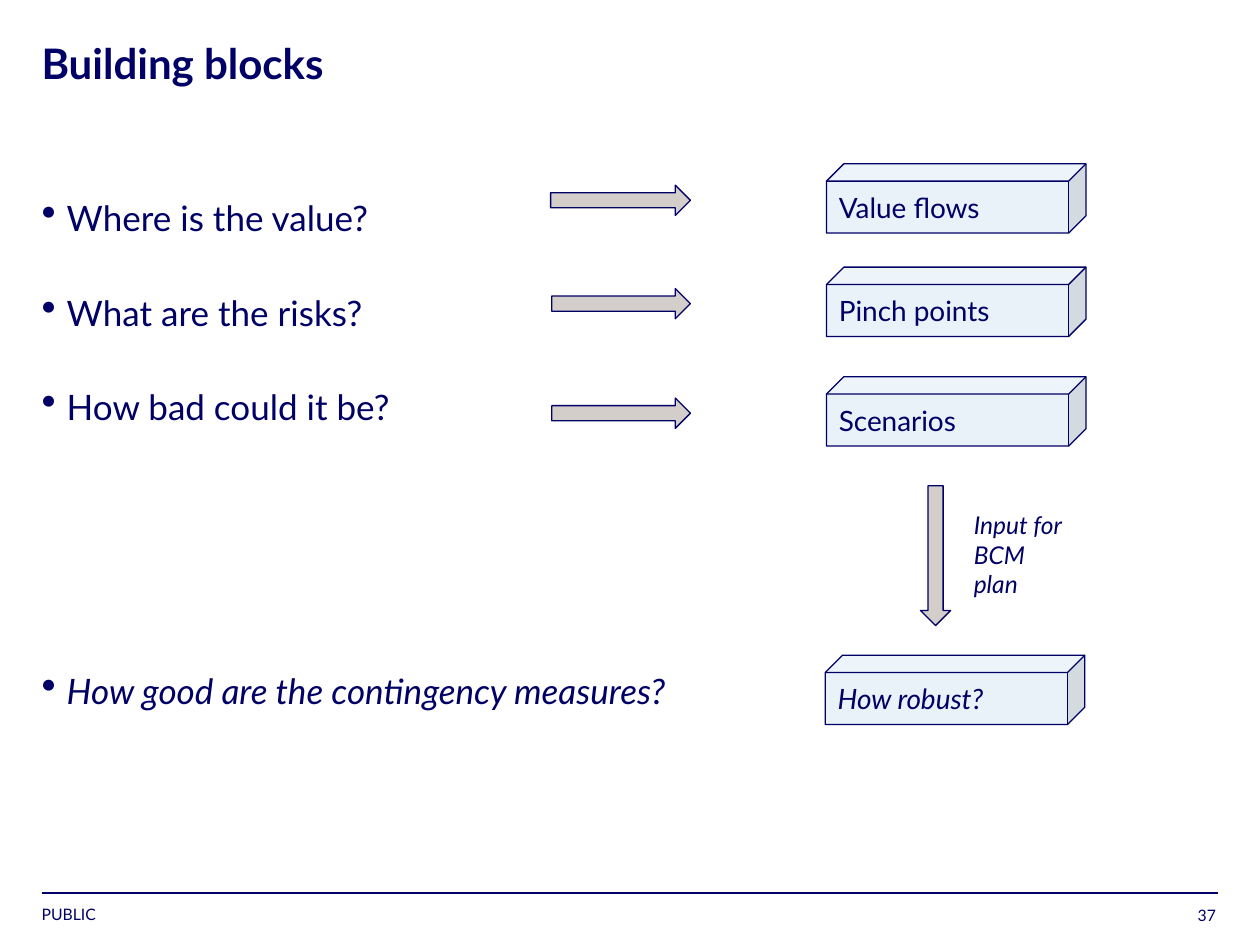
from lxml.etree import SubElement
from pptx import Presentation
from pptx.dml.color import RGBColor
from pptx.enum.shapes import MSO_CONNECTOR, MSO_SHAPE
from pptx.enum.text import MSO_ANCHOR, PP_ALIGN
from pptx.oxml.ns import qn
from pptx.util import Inches, Pt

NAVY = RGBColor(0x00, 0x00, 0x66)
TAUPE = RGBColor(0xA8, 0x9F, 0x96)
PALE_BLUE = RGBColor(0xD5, 0xE6, 0xF4)
FONT = "Lato"

QUESTIONS = [
    ("Where is the value?", 0, False),
    ("What are the risks?", 27, False),
    ("How bad could it be?", 27, False),
    ("How good are the contingency measures?", 135, True),
]
BLOCKS = [
    ("Value flows", 6.56, 1.3, False),
    ("Pinch points", 6.56, 2.12, False),
    ("Scenarios", 6.56, 2.99, False),
    ("How robust?", 6.55, 5.2, True),
]
ARROWS = [
    (4.37, 1.47, 1.11, 0),
    (4.38, 2.29, 1.1, 0),
    (4.38, 3.16, 1.1, 0),
    (6.87, 4.29, 1.11, 90),
]


def add_run(paragraph, text, size, bold=False, italic=False):
    run = paragraph.add_run()
    run.text = text
    font = run.font
    font.name = FONT
    font.size = Pt(size)
    font.bold = bold
    font.italic = italic
    font.color.rgb = NAVY


def add_text_frame(slide, left, top, width, height, margin=0.0):
    box = slide.shapes.add_textbox(Inches(left), Inches(top), Inches(width), Inches(height))
    frame = box.text_frame
    frame.word_wrap = True
    frame.margin_left = frame.margin_right = Inches(margin)
    frame.margin_top = frame.margin_bottom = Inches(margin / 2)
    return frame


def add_bullet(paragraph):
    properties = paragraph._p.get_or_add_pPr()
    properties.set("marL", str(Inches(0.2)))
    properties.set("indent", str(-Inches(0.2)))
    color = SubElement(properties, qn("a:buClr"))
    SubElement(color, qn("a:srgbClr"), val=str(NAVY))
    SubElement(properties, qn("a:buSzPct"), val="120000")
    SubElement(properties, qn("a:buChar"), char="•")


def add_shape(slide, kind, left, top, width, height, color):
    shape = slide.shapes.add_shape(kind, Inches(left), Inches(top), Inches(width), Inches(height))
    shape.shadow.inherit = False
    shape.fill.solid()
    shape.fill.fore_color.rgb = color
    fill_color = shape._element.spPr.find(qn("a:solidFill")).find(qn("a:srgbClr"))
    SubElement(fill_color, qn("a:alpha"), val="50000")
    shape.line.color.rgb = NAVY
    shape.line.width = Pt(0.75)
    return shape


def add_footer(slide, left, top, width):
    rule = slide.shapes.add_connector(
        MSO_CONNECTOR.STRAIGHT, Inches(left), Inches(top), Inches(left + width), Inches(top)
    )
    rule.line.color.rgb = NAVY
    rule.line.width = Pt(1)
    SubElement(rule._element.spPr, qn("a:effectLst"))
    label = add_text_frame(slide, left, top + 0.09, 1.28, 0.15)
    add_run(label.paragraphs[0], "PUBLIC", 9)
    number = add_text_frame(slide, left + width - 0.54, top + 0.09, 0.52, 0.16)
    number.vertical_anchor = MSO_ANCHOR.BOTTOM
    number.paragraphs[0].alignment = PP_ALIGN.RIGHT
    add_run(number.paragraphs[0], "37", 9)


def add_title(slide, left, top, width, height):
    paragraph = add_text_frame(slide, left, top, width, height).paragraphs[0]
    paragraph.line_spacing = 0.9
    add_run(paragraph, "Building blocks", 24, bold=True)


def add_questions(slide, left, top, width, height):
    frame = add_text_frame(slide, left, top, width, height)
    for index, (text, space_before, italic) in enumerate(QUESTIONS):
        paragraph = frame.add_paragraph() if index else frame.paragraphs[0]
        add_bullet(paragraph)
        paragraph.space_before = Pt(space_before)
        paragraph.space_after = Pt(3)
        add_run(paragraph, text, 20, italic=italic)


def add_arrow(slide, left, top, width, rotation):
    arrow = add_shape(slide, MSO_SHAPE.RIGHT_ARROW, left, top, width, 0.24, TAUPE)
    arrow.rotation = rotation


def add_block(slide, text, left, top, italic):
    block = add_shape(slide, MSO_SHAPE.CUBE, left, top, 2.06, 0.55, PALE_BLUE)
    frame = block.text_frame
    frame.word_wrap = False
    frame.vertical_anchor = MSO_ANCHOR.MIDDLE
    paragraph = frame.paragraphs[0]
    paragraph.alignment = PP_ALIGN.LEFT
    paragraph.space_after = Pt(6)
    add_run(paragraph, text, 16, italic=italic)


def add_plan_note(slide, left, top, width, height):
    frame = add_text_frame(slide, left, top, width, height, margin=0.1)
    add_run(frame.paragraphs[0], "Input for BCM plan", 14, italic=True)


def main():
    presentation = Presentation()
    presentation.slide_width = Inches(10)
    presentation.slide_height = Inches(7.5)
    slide = presentation.slides.add_slide(presentation.slide_layouts[6])
    add_footer(slide, 0.33, 7.09, 9.34)
    add_title(slide, 0.33, 0.34, 8.37, 0.39)
    add_questions(slide, 0.33, 1.56, 9.34, 5.42)
    for arrow in ARROWS:
        add_arrow(slide, *arrow)
    for block in BLOCKS:
        add_block(slide, *block)
    add_plan_note(slide, 7.63, 4, 0.99, 0.81)
    presentation.save("out.pptx")


if __name__ == "__main__":
    main()
